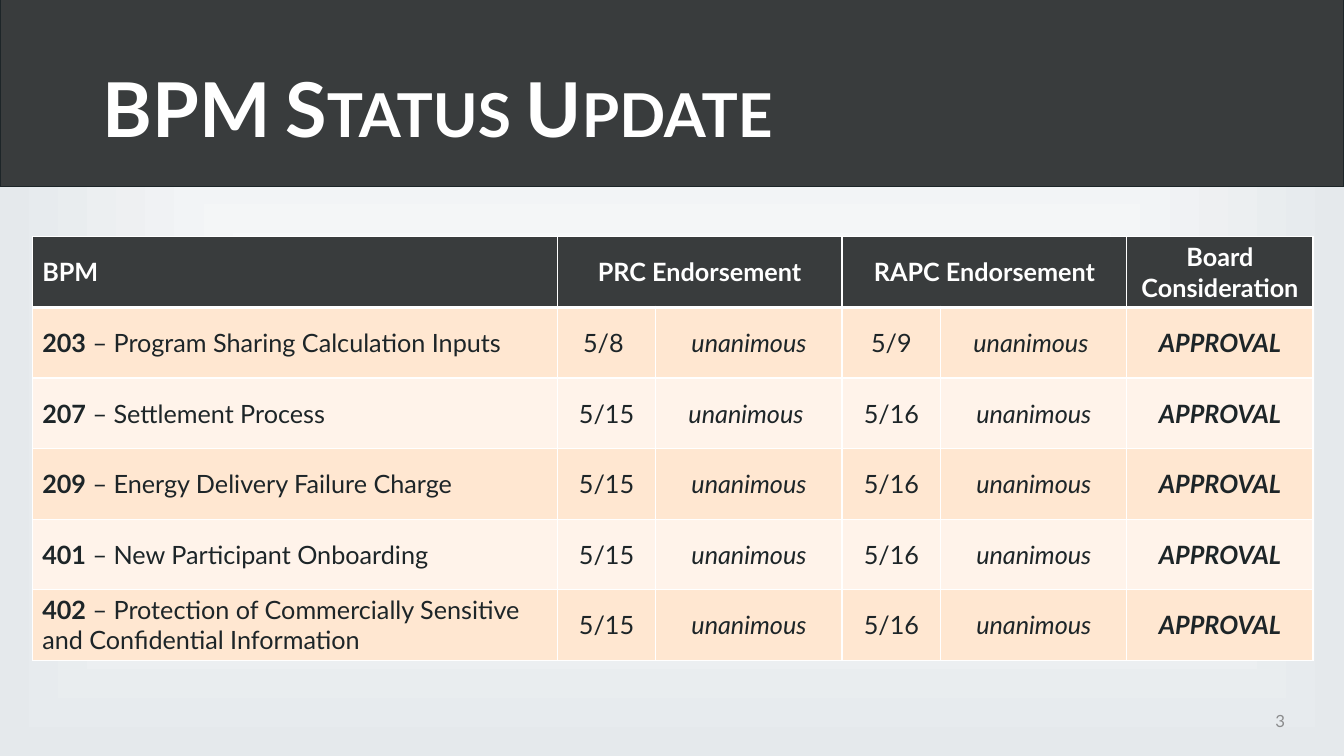
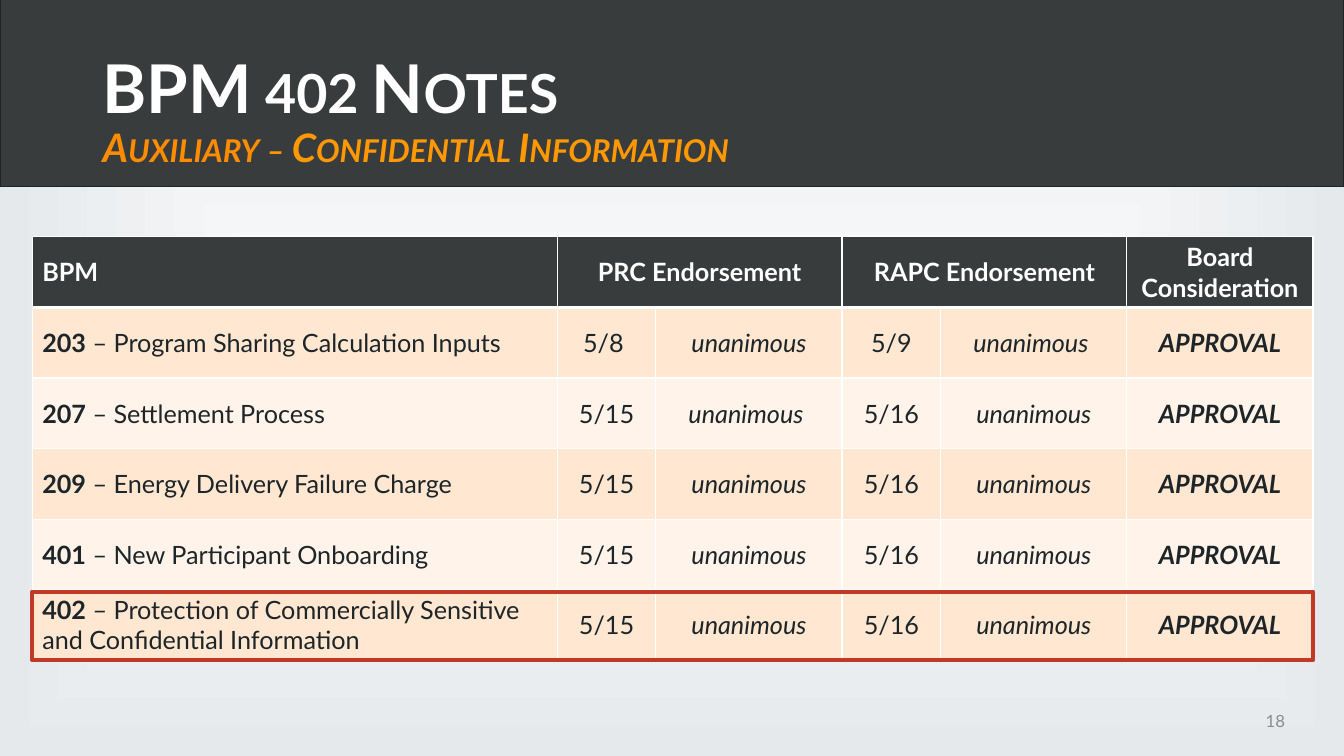
import pptx
import pptx.dml.color
import pptx.enum.shapes
import pptx.enum.text
import pptx.oxml
import pptx.oxml.ns
import pptx.util
from lxml import etree

Pt = pptx.util.Pt
RGBColor = pptx.dml.color.RGBColor
PP_ALIGN = pptx.enum.text.PP_ALIGN
MIDDLE = pptx.enum.text.MSO_ANCHOR.MIDDLE
RECTANGLE = pptx.enum.shapes.MSO_SHAPE.RECTANGLE
qn = pptx.oxml.ns.qn

CHARCOAL = RGBColor(0x39, 0x3C, 0x3D)
INK = RGBColor(0x1D, 0x25, 0x28)
WHITE = RGBColor(0xFF, 0xFF, 0xFF)
MIST = RGBColor(0xE5, 0xE9, 0xEC)
GRAY = RGBColor(0x8B, 0x8C, 0x8D)
ORANGE = RGBColor(0xFE, 0x8C, 0x00)
AMBER = RGBColor(0xFF, 0x98, 0x02)
PEACH = RGBColor(0xFF, 0xE7, 0xD1)
CREAM = RGBColor(0xFF, 0xF3, 0xEA)
RED = RGBColor(0xC1, 0x3A, 0x27)

FONT = "Lato"
SLIDE_SIZE = (960, 540)
BAND_BOX = (0, -10.8, 960, 144)
TITLE_BOX = (66.2, 28.8, 828, 104.4)
NUMBER_BOX = (880.5, 500.4, 44.6, 28.8)
TABLE_BOX = (23, 169.2, 915, 302.4)
COLUMN_WIDTHS = (375, 70.5, 133, 70.5, 133, 133)

HEADINGS = ("BPM", "PRC Endorsement", "", "RAPC Endorsement", "", "Board Consideration")
MANUALS = (
    ("203", "Program Sharing Calculation Inputs", "5/8 ", "unanimous", "5/9", "unanimous "),
    ("207", "Settlement Process", "5/15", "unanimous ", "5/16", "unanimous"),
    ("209", "Energy Delivery Failure Charge", "5/15", "unanimous", "5/16", "unanimous"),
    ("401", "New Participant Onboarding", "5/15", "unanimous", "5/16", "unanimous"),
    ("402", "Protection of Commercially Sensitive and Confidential Information",
     "5/15", "unanimous", "5/16", "unanimous"),
)
DECISION = "APPROVAL"


def points(box):
    """Convert a box of numbers to lengths."""
    return [Pt(value) for value in box]


def add_run(paragraph, text, size, color, bold=False, italic=False):
    """Append a formatted run to a paragraph."""
    run = paragraph.add_run()
    run.text = text
    font = run.font
    font.name, font.size, font.bold, font.italic = FONT, Pt(size), bold, italic
    font.color.rgb = color


def add_rectangle(slide, box, line_color, line_width, fill_color=None):
    """Add an outlined rectangle, filled when a colour is given."""
    rectangle = slide.shapes.add_shape(RECTANGLE, *points(box))
    rectangle.shadow.inherit = False
    if fill_color is None:
        rectangle.fill.background()
    else:
        rectangle.fill.solid()
        rectangle.fill.fore_color.rgb = fill_color
    rectangle.line.color.rgb = line_color
    rectangle.line.width = Pt(line_width)
    return rectangle


def set_backdrop(layout):
    """Give the layout its rectangular gradient."""
    fill = layout.background.fill
    fill.gradient()
    for stop, color, position in zip(fill.gradient_stops, (WHITE, MIST), (0, 1)):
        stop.color.rgb = color
        stop.position = position
    gradient = layout.element.find(".//" + qn("a:gradFill"))
    gradient.remove(gradient.find(qn("a:lin")))
    shade = etree.SubElement(gradient, qn("a:path"), path="shape")
    etree.SubElement(shade, qn("a:fillToRect"), {side: "50000" for side in "ltrb"})


def add_header(slide, title_lines):
    """Place the dark band and the small-caps title lines on it."""
    band = add_rectangle(slide, BAND_BOX, INK, 1, CHARCOAL)
    slide.shapes.element.insert(2, band.element)
    title = slide.shapes.title
    title.left, title.top, title.width, title.height = points(TITLE_BOX)
    frame = title.text_frame
    frame.auto_size = pptx.enum.text.MSO_AUTO_SIZE.NONE
    frame.vertical_anchor = MIDDLE
    paragraph = frame.paragraphs[0]
    paragraph.alignment = PP_ALIGN.LEFT
    paragraph.line_spacing = 0.9
    for index, line in enumerate(title_lines):
        if index:
            paragraph.add_line_break()
        for text, size, color, italic in line:
            add_run(paragraph, text, size, color, True, italic)
    for properties in title.element.iter(qn("a:rPr")):
        properties.set("cap", "small")


def add_page_number(slide, number):
    """Place the page number at the lower right."""
    footer = slide.shapes.add_textbox(*points(NUMBER_BOX)).text_frame
    footer.word_wrap = True
    footer.vertical_anchor = MIDDLE
    paragraph = footer.paragraphs[0]
    paragraph.alignment = PP_ALIGN.RIGHT
    add_run(paragraph, str(number), 12, GRAY)


def style_cell(cell, color, bottom_width=1):
    """Set a cell's white borders, fill and anchor."""
    properties = cell._tc.get_or_add_tcPr()
    for side, width in (("L", 1), ("R", 1), ("T", 1), ("B", bottom_width)):
        border = etree.SubElement(properties, qn("a:ln" + side), w=str(Pt(width)))
        solid = etree.SubElement(border, qn("a:solidFill"))
        etree.SubElement(solid, qn("a:srgbClr"), val=str(WHITE))
    cell.fill.solid()
    cell.fill.fore_color.rgb = color
    cell.vertical_anchor = MIDDLE


def add_endorsements(slide, box):
    """Fill the box with the endorsement table."""
    table = slide.shapes.add_table(len(MANUALS) + 1, len(HEADINGS), *points(box)).table
    table.horz_banding = False
    for column, width in zip(table.columns, COLUMN_WIDTHS):
        column.width = Pt(width)
    for row in table.rows:
        row.height = Pt(box[3] / len(table.rows))
    for first in (1, 3):
        table.cell(0, first).merge(table.cell(0, first + 1))

    for index, heading in enumerate(HEADINGS):
        cell = table.cell(0, index)
        style_cell(cell, CHARCOAL, 3)
        if heading:
            paragraph = cell.text_frame.paragraphs[0]
            paragraph.alignment = PP_ALIGN.CENTER if index else PP_ALIGN.LEFT
            add_run(paragraph, heading, 18, WHITE, True)

    for row, (number, subject, *endorsements) in enumerate(MANUALS, 1):
        values = [number, *endorsements, DECISION]
        for index, value in enumerate(values):
            cell = table.cell(row, index)
            style_cell(cell, PEACH if row % 2 else CREAM)
            paragraph = cell.text_frame.paragraphs[0]
            paragraph.alignment = PP_ALIGN.CENTER if index else PP_ALIGN.LEFT
            add_run(paragraph, value, 18, INK, index in (0, 5), index in (2, 4, 5))
        add_run(table.cell(row, 0).text_frame.paragraphs[0], f" – {subject}", 18, INK)


def add_last_row_frame(slide, box):
    """Outline the last table row within the table box."""
    left, top, width, height = box
    row_height = height / (len(MANUALS) + 1)
    inset = 1.4
    frame_top = top + height - row_height + inset
    add_rectangle(slide, (left, frame_top, width, row_height - inset), RED, 3)


def add_status_slide(deck, layout, title_lines, number):
    """Add a slide with a header, the table and a page number."""
    slide = deck.slides.add_slide(layout)
    add_header(slide, title_lines)
    add_page_number(slide, number)
    add_endorsements(slide, TABLE_BOX)
    return slide


def main():
    """Build and save the deck."""
    deck = pptx.Presentation()
    deck.slide_width, deck.slide_height = points(SLIDE_SIZE)
    layout = deck.slide_layouts[5]
    set_backdrop(layout)
    add_status_slide(deck, layout, [[("BPM Status Update", 54, WHITE, False)]], 3)
    notes_title = [
        [("BPM 402 Notes", 48, WHITE, False)],
        [("Auxiliary", 28, ORANGE, True), (" – Confidential Information", 28, AMBER, True)],
    ]
    notes = add_status_slide(deck, layout, notes_title, 18)
    add_last_row_frame(notes, TABLE_BOX)
    deck.save("out.pptx")


if __name__ == "__main__":
    main()
